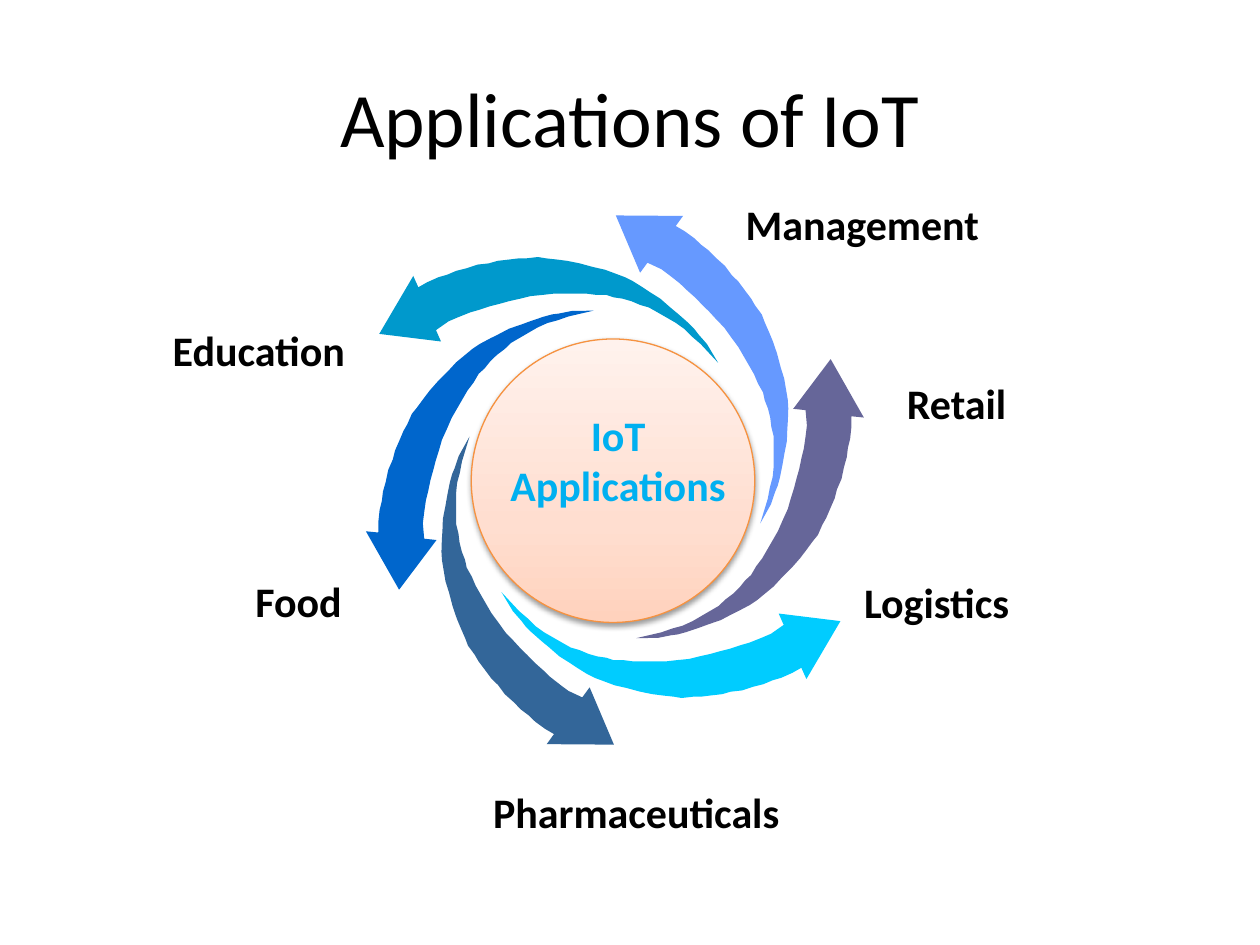
"""Build the Applications of IoT slide: six swirling arrows around a labelled circle."""
from copy import deepcopy

from lxml import etree
from pptx import Presentation
from pptx import util as u
from pptx.dml.color import RGBColor
from pptx.enum import shapes, text
from pptx.oxml.ns import qn

COLORS = {
    "text": "000000", "hub_text": "00B0F0", "hub_line": "F69240", "shadow": "000000",
    "cyan": "00CCFF", "steel": "336699", "blue": "0066CC",
    "teal": "0099CC", "sky": "6699FF", "purple": "666699",
}
HUB_GRADIENT = [(0, "FFD2BD"), (0.35, "FFDED0"), (1, "FFF2ED")]
ALIGN = text.PP_ALIGN
ARROW_OUTLINE = [
    (6.22, 4.96), (6.18, 4.87), (6.67, 4.93), (6.4, 5.39), (6.36, 5.3), (6.29, 5.34),
    (6.2, 5.38), (6.13, 5.4), (6.06, 5.43), (5.98, 5.45), (5.89, 5.48), (5.8, 5.49),
    (5.73, 5.51), (5.64, 5.52), (5.56, 5.53), (5.5, 5.53), (5.41, 5.54), (5.35, 5.53),
    (5.26, 5.52), (5.18, 5.51), (5.08, 5.49), (4.97, 5.46), (4.88, 5.44), (4.8, 5.41),
    (4.72, 5.38), (4.66, 5.35), (4.58, 5.3), (4.52, 5.26), (4.44, 5.21), (4.36, 5.14),
    (4.3, 5.09), (4.22, 5.02), (4.17, 4.97), (4.14, 4.93), (4.07, 4.85), (3.98, 4.7),
    (4.12, 4.85), (4.19, 4.91), (4.25, 4.97), (4.32, 5.02), (4.39, 5.06), (4.46, 5.1),
    (4.53, 5.14), (4.6, 5.16), (4.67, 5.19), (4.74, 5.21), (4.81, 5.22), (4.87, 5.24),
    (4.95, 5.24), (5.03, 5.25), (5.1, 5.25), (5.18, 5.25), (5.28, 5.25), (5.37, 5.24),
    (5.47, 5.23), (5.55, 5.21), (5.64, 5.19), (5.71, 5.17), (5.79, 5.15), (5.88, 5.12),
    (5.95, 5.1), (6.05, 5.06), (6.12, 5.03),
]
ARROWS = [
    (3.98, 4.7, "cyan"), (2.69, 4.42, "steel"), (2.33, 3, "blue"),
    (3.01, 2.04, "teal"), (4.38, 2.36, "sky"), (4.74, 3.69, "purple"),
]
LABELS = [
    ("Education", 1.07, 2.53, 1.97, ALIGN.CENTER, False),
    ("Food", 1.83, 4.52, 1.08, ALIGN.CENTER, False),
    ("Management", 5.82, 1.53, 2.67, ALIGN.LEFT, True),
    ("IoT Applications", 3.81, 3.25, 2.19, ALIGN.CENTER, True),
    ("Retail", 7.1, 2.95, 1.23, ALIGN.LEFT, False),
    ("Logistics", 6.76, 4.53, 1.74, ALIGN.LEFT, False),
    ("Pharmaceuticals", 3.61, 6.19, 2.88, ALIGN.CENTER, False),
]


def set_values(target, values):
    for name, value in values.items():
        setattr(target, name, value)


def write_text(shape, words, size, bold, color, alignment):
    paragraph = shape.text_frame.paragraphs[0]
    paragraph.alignment = alignment
    run = paragraph.add_run()
    run.text = words
    set_values(run.font, {"name": "Calibri", "size": u.Pt(size), "bold": bold})
    run.font.color.rgb = RGBColor.from_string(COLORS[color])


presentation = Presentation()
set_values(presentation, {"slide_width": u.Inches(10), "slide_height": u.Inches(7.5)})
slide = presentation.slides.add_slide(presentation.slide_layouts[5])

title = slide.shapes.title
set_values(title, {"left": u.Inches(0.5), "top": u.Inches(0.3),
                   "width": u.Inches(9), "height": u.Inches(1.25)})
title.text_frame.vertical_anchor = text.MSO_ANCHOR.MIDDLE
write_text(title, "Applications of IoT", 44, False, "text", ALIGN.CENTER)

arrow_points = [(u.Inches(x), u.Inches(y)) for x, y in ARROW_OUTLINE]
for index, (left, top, color) in enumerate(ARROWS):
    builder = slide.shapes.build_freeform(*arrow_points[0])
    builder.add_line_segments(arrow_points[1:], close=True)
    arrow = builder.convert_to_shape()
    set_values(arrow, {"left": u.Inches(left), "top": u.Inches(top), "rotation": 60 * index})
    arrow.fill.solid()
    arrow.fill.fore_color.rgb = RGBColor.from_string(COLORS[color])
    arrow.line.fill.background()
    arrow.shadow.inherit = False

hub = slide.shapes.add_shape(shapes.MSO_SHAPE.OVAL, u.Inches(3.74), u.Inches(2.69),
                             u.Inches(2.25), u.Inches(2.25))
hub.fill.gradient()
hub.fill.gradient_angle = 90
properties = hub._element.spPr
stop_list = properties.find(".//" + qn("a:gsLst"))
stop_list.append(deepcopy(stop_list[0]))
for stop, (position, color) in zip(hub.fill.gradient_stops, HUB_GRADIENT):
    stop.position = position
    stop.color.rgb = RGBColor.from_string(color)
hub.line.color.rgb = RGBColor.from_string(COLORS["hub_line"])
hub.line.width = u.Pt(0.75)
hub.shadow.inherit = False
shadow = etree.SubElement(properties.find(qn("a:effectLst")), qn("a:outerShdw"),
                          blurRad=str(u.Pt(3.1)), dist=str(u.Pt(1.6)),
                          dir="5400000", rotWithShape="0")
shadow_color = etree.SubElement(shadow, qn("a:srgbClr"), val=COLORS["shadow"])
etree.SubElement(shadow_color, qn("a:alpha"), val="38000")

for words, left, top, width, alignment, wrap in LABELS:
    in_hub = words == "IoT Applications"
    label = slide.shapes.add_textbox(u.Inches(left), u.Inches(top), u.Inches(width),
                                     u.Inches(0.91 if in_hub else 0.5))
    set_values(label.text_frame, {"word_wrap": wrap,
                                  "auto_size": text.MSO_AUTO_SIZE.SHAPE_TO_FIT_TEXT})
    if in_hub:
        set_values(label.text_frame, {
            "margin_left": u.Inches(0.05), "margin_right": u.Inches(0.05),
            "margin_top": 0, "margin_bottom": u.Inches(0.1)})
    write_text(label, words, 24, True, "hub_text" if in_hub else "text", alignment)

presentation.save("out.pptx")
